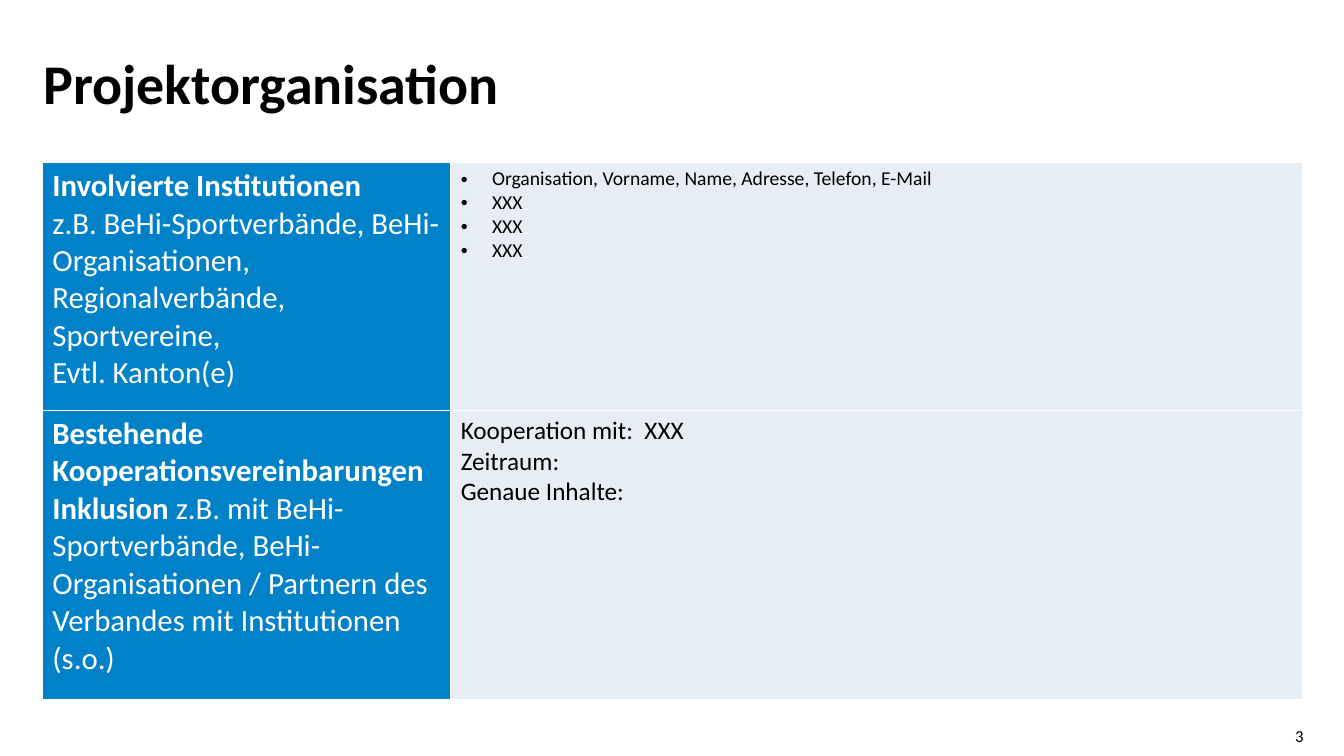
from lxml.etree import SubElement
from pptx import Presentation
from pptx.dml.color import RGBColor
from pptx.enum.text import MSO_ANCHOR as Anchor, PP_ALIGN as Align
from pptx.oxml.ns import qn
from pptx.util import Inches, Pt

FONT = "Calibri"
BLACK, WHITE, BLUE, PALE = "000000", "FFFFFF", "0081C8", "E7EDF5"
TITLE = "Projektorganisation"
PAGE_NUMBER = "3"
COLUMN_WIDTHS = (4.05, 8.45)
ROW_HEIGHTS = (2.46, 2.87)

# Each paragraph is a list of (text, bold) runs; "\n" is a line break.
INSTITUTIONS = [
    [("Involvierte Institutionen", True), ("\n", False),
     ("z.B. BeHi-Sportverbände, BeHi-Organisationen, Regionalverbände, Sportvereine,", False)],
    [("Evtl. Kanton(e)", False)],
]
CONTACTS = [[(text, False)] for text in (
    "Organisation, Vorname, Name, Adresse, Telefon, E-Mail", "XXX", "XXX", "XXX")]
AGREEMENTS = [
    [("Bestehende Kooperationsvereinbarungen Inklusion ", True),
     ("z.B. mit BeHi-Sportverbände, BeHi-Organisationen / Partnern des "
      "Verbandes mit Institutionen (s.o.)", False)],
]
DETAILS = [[(text, False)] for text in (
    "Kooperation mit:  XXX", "Zeitraum:", "Genaue Inhalte:")]

# Rows of cells: paragraphs, size, text colour, fill, bulleted
ROWS = [
    [(INSTITUTIONS, 22, WHITE, BLUE, False), (CONTACTS, 14, BLACK, PALE, True)],
    [(AGREEMENTS, 22, WHITE, BLUE, False), (DETAILS, 18, BLACK, PALE, False)],
]


def rgb(value):
    return RGBColor.from_string(value)


def add_run(paragraph, text, size, color=BLACK, bold=False):
    run = paragraph.add_run()
    run.text = text
    run.font.name = FONT
    run.font.size = Pt(size)
    run.font.bold = bold
    run.font.color.rgb = rgb(color)


def add_bullet(paragraph):
    properties = paragraph._p.get_or_add_pPr()
    indent = Inches(0.31)
    properties.set("marL", str(indent))
    properties.set("indent", str(-indent))
    SubElement(properties, qn("a:buFont"), typeface="Arial")
    SubElement(properties, qn("a:buChar"), char="•")


def add_borders(cell):
    properties = cell._tc.get_or_add_tcPr()
    for side in ("lnL", "lnR", "lnT", "lnB"):
        line = SubElement(properties, qn(f"a:{side}"), w=str(Pt(1)))
        fill = SubElement(line, qn("a:solidFill"))
        SubElement(fill, qn("a:srgbClr"), val=WHITE)


def fill_cell(cell, paragraphs, size, color, background, bulleted):
    add_borders(cell)
    cell.fill.solid()
    cell.fill.fore_color.rgb = rgb(background)
    frame = cell.text_frame
    for index, runs in enumerate(paragraphs):
        paragraph = frame.add_paragraph() if index else frame.paragraphs[0]
        if bulleted:
            add_bullet(paragraph)
        for text, bold in runs:
            if text == "\n":
                paragraph.add_line_break()
            else:
                add_run(paragraph, text, size, color, bold)


def prepare_frame(shape, anchor, align):
    """Remove the margins and return the first paragraph."""
    frame = shape.text_frame
    frame.margin_left = frame.margin_right = frame.margin_top = frame.margin_bottom = 0
    frame.word_wrap = True
    frame.vertical_anchor = anchor
    paragraph = frame.paragraphs[0]
    paragraph.alignment = align
    return paragraph


presentation = Presentation()
presentation.slide_width, presentation.slide_height = Inches(13.33), Inches(7.5)
slide = presentation.slides.add_slide(presentation.slide_layouts[5])

title = slide.shapes.title
title.left, title.top = Inches(0.43), Inches(0.56)
title.width, title.height = Inches(10), Inches(0.85)
heading = prepare_frame(title, Anchor.TOP, Align.LEFT)
heading.line_spacing = 0.9
add_run(heading, TITLE, 40, bold=True)

table = slide.shapes.add_table(
    len(ROWS), len(COLUMN_WIDTHS), Inches(0.42), Inches(1.61),
    Inches(sum(COLUMN_WIDTHS)), Inches(sum(ROW_HEIGHTS))).table
table.first_row = table.horz_banding = False
for column, width in zip(table.columns, COLUMN_WIDTHS):
    column.width = Inches(width)
for row, height, contents in zip(table.rows, ROW_HEIGHTS, ROWS):
    row.height = Inches(height)
    for cell, content in zip(row.cells, contents):
        fill_cell(cell, *content)

page_box = slide.shapes.add_textbox(Inches(12.46), Inches(7.2), Inches(0.47), Inches(0.2))
add_run(prepare_frame(page_box, Anchor.MIDDLE, Align.RIGHT), PAGE_NUMBER, 12)

presentation.save("out.pptx")
